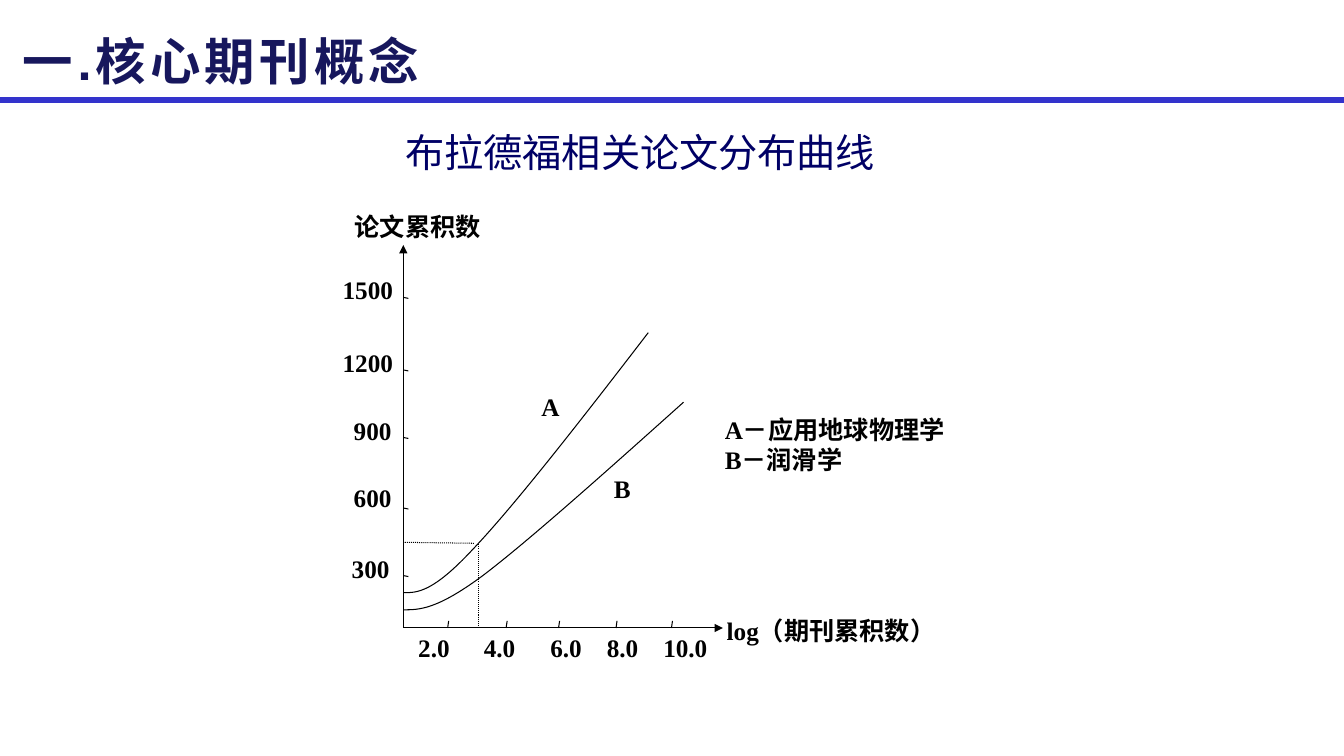
from dataclasses import dataclass

from lxml.etree import SubElement
from pptx import Presentation
from pptx.dml.color import RGBColor
from pptx.enum.dml import MSO_LINE
from pptx.enum.shapes import MSO_CONNECTOR, MSO_SHAPE
from pptx.enum.text import MSO_ANCHOR, PP_ALIGN
from pptx.oxml.ns import qn
from pptx.util import Inches, Pt


@dataclass(frozen=True)
class Theme:
    white: RGBColor = RGBColor(0xFF, 0xFF, 0xFF)
    ink: RGBColor = RGBColor(0, 0, 0)
    title: RGBColor = RGBColor(0x17, 0x17, 0x5D)
    subtitle: RGBColor = RGBColor(0, 0, 0x66)
    rule: RGBColor = RGBColor(0x33, 0x33, 0xCC)
    title_size: int = 36
    subtitle_size: int = 28
    label_size: int = 18
    thin: float = 0.75
    thick: float = 4.5
    title_font: str = "Arial"
    label_font: str = "Times New Roman"
    chinese_font: str = "Noto Sans CJK SC"


THEME = Theme()
ORIGIN_X, ORIGIN_Y = 4, 6.23
LABEL_HEIGHT = 0.52

Y_AXIS = [
    ("1500", 3.3, 2.67, 0.92, 2.95),
    ("1200", 3.3, 3.4, 0.92, 3.67),
    ("900", 3.41, 4.07, 0.81, 4.34),
    ("600", 3.41, 4.74, 0.81, 5.04),
    ("300", 3.39, 5.44, 0.9, 5.71),
]
X_AXIS = [
    ("10.0", 6.48, 0.75, 6.66),
    ("8.0", 5.92, 0.65, 6.11),
    ("6.0", 5.36, 0.65, 5.54),
    ("4.0", 4.7, 0.65, 5.02),
    ("2.0", 4.05, 0.7, 4.44),
]
CURVE_A = [(4, 5.88), (4.14, 5.88), (4.29, 5.88), (4.69, 5.45),
           (5.1, 5.02), (5.77, 4.16), (6.43, 3.3)]
CURVE_B = [(4, 6.05), (4.16, 6.05), (4.33, 6.05), (4.79, 5.71),
           (5.25, 5.36), (6.01, 4.68), (6.78, 3.99)]


def style_text(frame, font, size, color, bold, align, spacing=0):
    frame.word_wrap = True
    for para in frame.paragraphs:
        para.alignment = align
        for span in para.runs:
            span.font.name = font
            span.font.size = Pt(size)
            span.font.bold = bold
            span.font.color.rgb = color
            properties = span.font._element
            properties.find(qn("a:latin")).addnext(
                SubElement(properties, qn("a:ea"), typeface=THEME.chinese_font))
            if spacing:
                properties.set("spc", str(spacing * 100))


def add_heading(page, text, left, top, width, height, font, size, color,
                bold=False, align=PP_ALIGN.LEFT, spacing=0):
    box = page.shapes.add_textbox(Inches(left), Inches(top), Inches(width), Inches(height))
    box.text_frame.text = text
    box.text_frame.vertical_anchor = MSO_ANCHOR.MIDDLE
    style_text(box.text_frame, font, size, color, bold, align, spacing)


def add_label(page, text, left, top, width, height=LABEL_HEIGHT):
    box = page.shapes.add_shape(
        MSO_SHAPE.RECTANGLE, Inches(left), Inches(top), Inches(width), Inches(height))
    box.shadow.inherit = False
    box.fill.solid()
    box.fill.fore_color.rgb = THEME.white
    box.line.color.rgb = THEME.white
    box.line.width = Pt(THEME.thin)
    box.text_frame.text = text
    box.text_frame.vertical_anchor = MSO_ANCHOR.TOP
    style_text(box.text_frame, THEME.label_font, THEME.label_size, THEME.ink,
               True, PP_ALIGN.JUSTIFY)


def add_line(page, start, end, color=THEME.ink, width=THEME.thin, dotted=False, arrow=False):
    line = page.shapes.add_connector(
        MSO_CONNECTOR.STRAIGHT, *(Inches(value) for value in (*start, *end)))
    line.line.color.rgb = color
    line.line.width = Pt(width)
    if dotted:
        line.line.dash_style = MSO_LINE.ROUND_DOT
    if arrow:
        SubElement(line.line._get_or_add_ln(), qn("a:tailEnd"), type="triangle")
    SubElement(line._element.spPr, qn("a:effectLst"))


def add_curve(page, points):
    start, *controls = [(Inches(x), Inches(y)) for x, y in points]
    builder = page.shapes.build_freeform(*start)
    builder.add_line_segments(controls, close=False)
    curve = builder.convert_to_shape()
    curve.shadow.inherit = False
    curve.fill.background()
    curve.line.color.rgb = THEME.ink
    curve.line.width = Pt(THEME.thin)
    segments = list(curve._element.iter(qn("a:lnTo")))
    outline = segments[0].getparent()
    for first in range(0, len(segments), 3):
        bezier = SubElement(outline, qn("a:cubicBezTo"))
        for segment in segments[first:first + 3]:
            bezier.append(segment[0])
            outline.remove(segment)


def add_labels(page):
    add_label(page, "B", 5.99, 4.65, 0.45)
    add_label(page, "A", 5.27, 3.83, 0.45)
    add_label(page, "A－应用地球物理学\nB－润滑学", 7.09, 4.06, 2.94, 1.03)
    for text, left, width, _ in X_AXIS:
        add_label(page, text, left, 6.22, width)
    for text, left, top, width, _ in Y_AXIS:
        add_label(page, text, left, top, width)
    add_label(page, "log（期刊累积数）", 7.11, 6.05, 2.64)
    add_label(page, "论文累积数", 3.42, 2.05, 2.39)


def add_axes(page):
    origin = (ORIGIN_X, ORIGIN_Y)
    add_line(page, origin, (ORIGIN_X, 2.43), arrow=True)
    add_line(page, origin, (7.17, ORIGIN_Y), arrow=True)
    for *_, tick in Y_AXIS:
        add_line(page, (ORIGIN_X, tick), (ORIGIN_X + 0.05, tick + 0.01))
    for *_, tick in X_AXIS:
        add_line(page, (tick, ORIGIN_Y), (tick + 0.01, ORIGIN_Y - 0.07))


def main():
    deck = Presentation()
    deck.slide_width, deck.slide_height = Inches(13.33), Inches(7.5)
    page = deck.slides.add_slide(deck.slide_layouts[6])
    add_line(page, (0, 0.99), (13.33, 0.99), THEME.rule, THEME.thick)
    add_heading(page, "一.核心期刊概念", 0.13, 0.21, 12, 0.77, THEME.title_font,
                THEME.title_size, THEME.title, bold=True, spacing=3)
    add_labels(page)
    add_line(page, (4.75, 5.4), (4.75, ORIGIN_Y), dotted=True)
    add_line(page, (4.7, 5.39), (ORIGIN_X, 5.38), dotted=True)
    add_curve(page, CURVE_B)
    add_curve(page, CURVE_A)
    add_axes(page)
    add_heading(page, "布拉德福相关论文分布曲线", 3.83, 1.22, 5.04, 0.57, THEME.chinese_font,
                THEME.subtitle_size, THEME.subtitle, align=PP_ALIGN.CENTER)
    deck.save("out.pptx")


if __name__ == "__main__":
    main()
